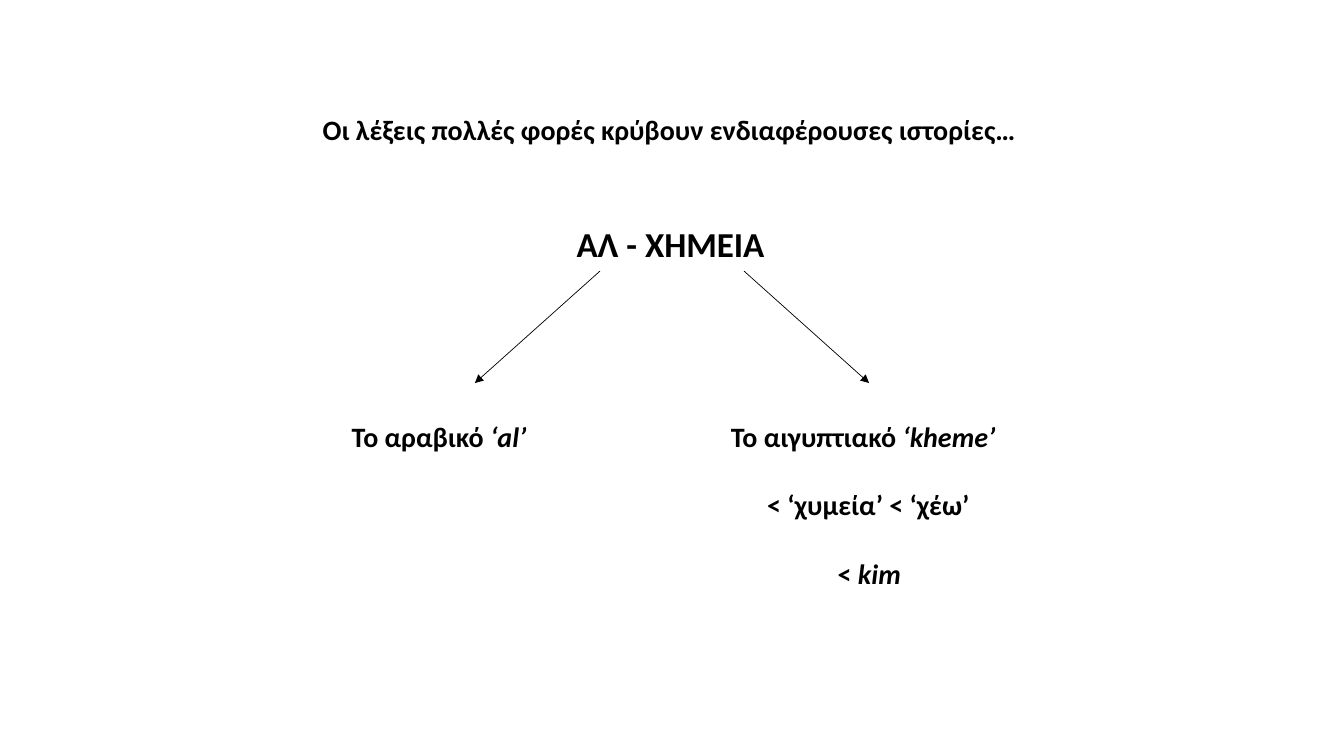
"""Build the slide on the origin of the word alchemy."""
import pptx
import pptx.util
import pptx.dml.color
import pptx.enum.shapes
import pptx.enum.text
import lxml.etree

PX = 9144
SIZE = (1333, 750)
FONT = "Calibri"
INK = "000000"

TITLE = ((310, 107, 713, 44), 20, "Οι λέξεις πολλές φορές κρύβουν ενδιαφέρουσες ιστορίες…", "")
LABELS = [
    ((562, 216, 208, 52), 25, "ΑΛ - ΧΗΜΕΙΑ", ""),
    ((339, 411, 194, 44), 20, "Το αραβικό ", "‘al’"),
    ((715, 411, 295, 44), 20, "Το αιγυπτιακό", " ‘kheme’"),
    ((751, 479, 223, 44), 20, "< ‘χυμεία’ < ‘χέω’", ""),
    ((821, 547, 83, 44), 20, "< ", "kim"),
]
ARROWS = [(595, 269, 471, 380), (738, 269, 862, 380)]


def emu(nums):
    return [pptx.util.Emu(n * PX) for n in nums]


def color(code):
    return pptx.dml.color.RGBColor.from_string(code)


def fill_text(shape, label):
    """Place a bold label whose second part is italic."""
    box, size, plain, slant = label
    shape.left, shape.top, shape.width, shape.height = emu(box)
    frame = shape.text_frame
    frame.word_wrap = False
    frame.auto_size = pptx.enum.text.MSO_AUTO_SIZE.SHAPE_TO_FIT_TEXT
    frame.vertical_anchor = pptx.enum.text.MSO_ANCHOR.TOP
    para = frame.paragraphs[0]
    para.alignment = pptx.enum.text.PP_ALIGN.LEFT
    for text, italic in ((plain, False), (slant, True)):
        if text:
            run = para.add_run()
            run.text = text
            font = run.font
            font.name, font.size = FONT, pptx.util.Pt(size)
            font.bold, font.italic = True, italic
            font.color.rgb = color(INK)


def add_arrow(slide, ends):
    """Draw a thin line with a triangle at its end."""
    kind = pptx.enum.shapes.MSO_CONNECTOR.STRAIGHT
    arrow = slide.shapes.add_connector(kind, *emu(ends))
    arrow.line.color.rgb = color(INK)
    arrow.line.width = pptx.util.Pt(0.5)
    space = pptx.oxml.ns.qn
    line = arrow.line._get_or_add_ln()
    lxml.etree.SubElement(line, space("a:tailEnd"), type="triangle")
    lxml.etree.SubElement(arrow._element.spPr, space("a:effectLst"))


def main():
    """Assemble and save the slide."""
    deck = pptx.Presentation()
    deck.slide_width, deck.slide_height = emu(SIZE)
    slide = deck.slides.add_slide(deck.slide_layouts[5])
    fill_text(slide.shapes.title, TITLE)
    for label in LABELS:
        fill_text(slide.shapes.add_textbox(*emu(label[0])), label)
    for ends in ARROWS:
        add_arrow(slide, ends)
    deck.save("out.pptx")


if __name__ == "__main__":
    main()
